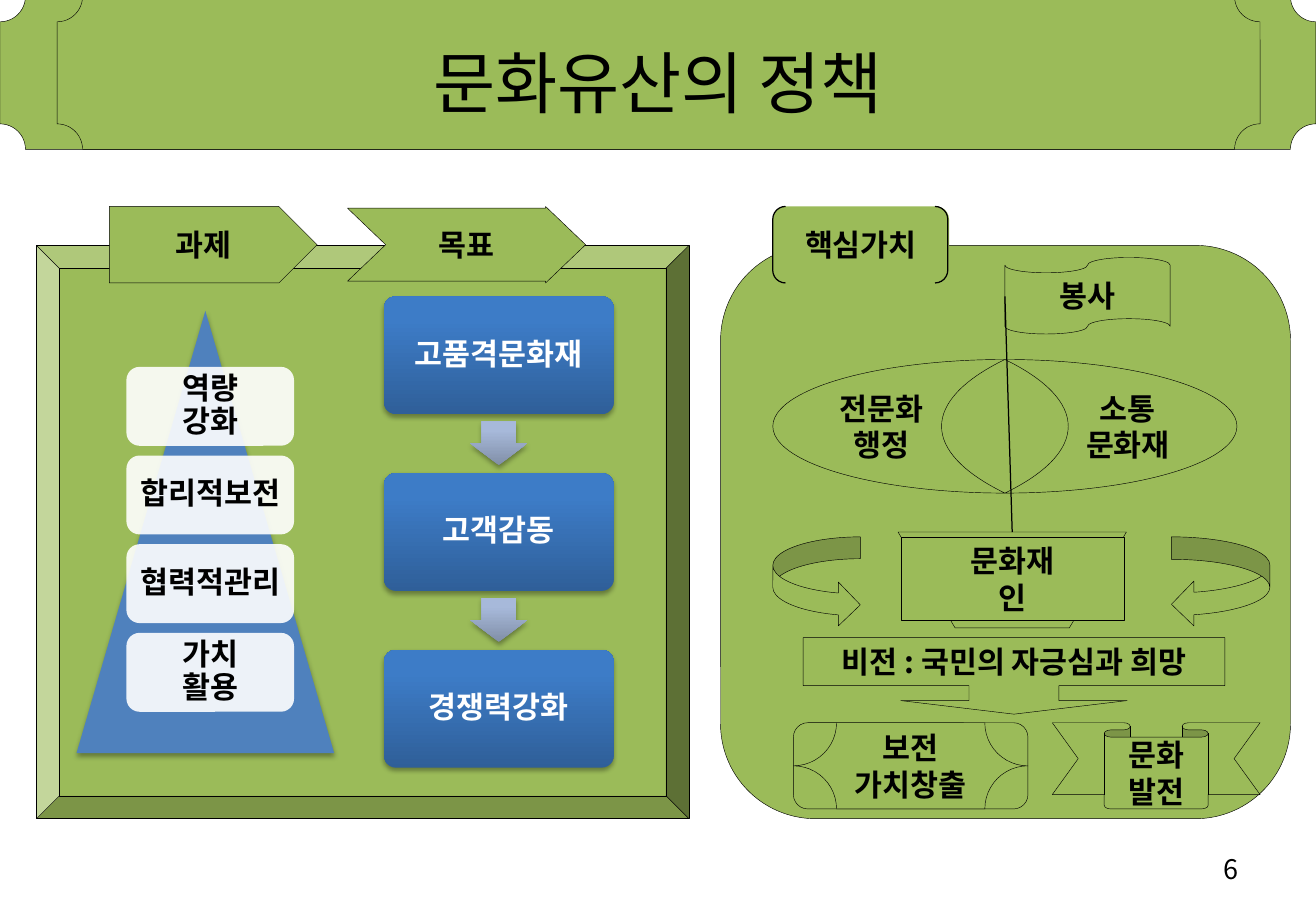
from dataclasses import dataclass
from typing import Optional

from lxml.etree import SubElement
from pptx import Presentation
from pptx.dml.color import RGBColor
from pptx.enum.shapes import MSO_CONNECTOR, MSO_SHAPE as Kind
from pptx.enum.text import MSO_ANCHOR, MSO_AUTO_SIZE, PP_ALIGN
from pptx.oxml.ns import qn
from pptx.util import Inches, Pt


@dataclass(frozen=True)
class Theme:
    font: str = "Noto Sans CJK KR"
    green: str = "9BBB59"
    blue: str = "4F81BD"
    white: str = "FFFFFF"
    black: str = "000000"
    goal: tuple[str, str] = ("2F5F99", "3D7CC7")
    arrow: tuple[str, str] = ("818FA8", "A7B9DA")
    title_size: float = 40
    label_size: float = 18
    number_size: float = 16
    hairline: float = 0.25
    thin_line: float = 0.75


THEME = Theme()


@dataclass(frozen=True)
class Figure:
    kind: Kind
    at: tuple[float, float, float, float]
    text: str = ""
    adjust: tuple[float, ...] = ()
    fill: Optional[str] = THEME.green
    gradient: Optional[tuple[str, str]] = None
    opacity: int = 100
    line: float = THEME.hairline
    ink: str = THEME.black
    flip: str = ""
    shadow: bool = False
    wrap: bool = False


BANNER = [
    Figure(Kind.PLAQUE, (0, -0.03, 10.83, 1.26)),
    Figure(Kind.PLAQUE, (0.47, -0.03, 9.9, 1.26)),
]

TASKS = ["역량\v강화", "합리적보전", "협력적관리", "가치\v활용"]
TASK_TOP, TASK_STEP = 3.02, 0.73
GOALS = ["고품격문화재", "고객감동", "경쟁력강화"]
GOAL_TOP, GOAL_STEP, GOAL_TO_ARROW = 2.44, 1.455, 1.03

TASKS_AND_GOALS = [
    Figure(Kind.BEVEL, (0.3, 2.02, 5.37, 4.72), adjust=(0.04,)),
    Figure(Kind.PENTAGON, (0.9, 1.7, 1.71, 0.63), "과제"),
    Figure(Kind.NOTCHED_RIGHT_ARROW, (2.86, 1.7, 1.96, 0.63), "목표",
           adjust=(0.954, 0.523)),
    Figure(Kind.ISOSCELES_TRIANGLE, (0.63, 2.56, 2.12, 3.64),
           fill=THEME.blue, line=0, shadow=True),
    *(Figure(Kind.ROUNDED_RECTANGLE,
             (1.04, TASK_TOP + TASK_STEP * row, 1.38, 0.65), task,
             fill=THEME.white, opacity=90, line=0, wrap=True)
      for row, task in enumerate(TASKS)),
    *(Figure(Kind.ROUNDED_RECTANGLE,
             (3.16, GOAL_TOP + GOAL_STEP * row, 1.89, 0.97), goal,
             adjust=(0.1,), gradient=THEME.goal, line=0,
             ink=THEME.white, shadow=True, wrap=True)
      for row, goal in enumerate(GOALS)),
    *(Figure(Kind.DOWN_ARROW,
             (3.87, GOAL_TOP + GOAL_TO_ARROW + GOAL_STEP * row, 0.47, 0.36),
             adjust=(0.6, 0.5), gradient=THEME.arrow, line=0, shadow=True)
      for row in range(len(GOALS) - 1)),
]

CORE_VALUES = [
    Figure(Kind.ROUNDED_RECTANGLE, (5.93, 2.02, 4.69, 4.72)),
    Figure(Kind.ROUNDED_RECTANGLE, (6.36, 1.7, 1.45, 0.63), "핵심가치", line=0),
    Figure(Kind.DOUBLE_BRACKET, (6.36, 1.7, 1.44, 0.63),
           fill=None, line=THEME.thin_line),
    Figure(Kind.MOON, (6.36, 2.96, 1.91, 1.1), "전문화\n행정", adjust=(0.727,)),
    Figure(Kind.MOON, (8.27, 2.96, 1.91, 1.1), "소통\n문화재",
           adjust=(0.727,), flip="flipH"),
    Figure(Kind.FLOWCHART_PUNCHED_TAPE, (8.27, 2.12, 1.36, 0.63), "봉사"),
    Figure(Kind.TRAPEZOID, (7.39, 4.38, 1.88, 0.79),
           adjust=(0.595,), flip="flipV"),
    Figure(Kind.RECTANGLE, (7.42, 4.42, 1.83, 0.69), "문화재\n인"),
    Figure(Kind.CURVED_RIGHT_ARROW, (6.36, 4.42, 0.72, 0.74)),
    Figure(Kind.CURVED_LEFT_ARROW, (9.64, 4.42, 0.81, 0.74)),
    Figure(Kind.DOWN_ARROW_CALLOUT, (6.61, 5.25, 3.47, 0.63),
           "비전 : 국민의 자긍심과 희망", adjust=(1.175, 1.479, 0.177, 0.627)),
    Figure(Kind.ROUNDED_RECTANGLE, (6.53, 5.95, 1.93, 0.71)),
    Figure(Kind.PLAQUE, (6.53, 5.95, 1.93, 0.71), "보전\n가치창출", adjust=(0.5,)),
    Figure(Kind.DOWN_RIBBON, (8.66, 5.95, 1.71, 0.71), "문화\n발전"),
]
FLAGPOLE = (8.27, 2.44, 8.33, 4.38)


def color(value: str) -> RGBColor:
    return RGBColor.from_string(value)


def write(shape, text: str, size: float, ink: str = THEME.black,
          bold: bool = False, align: PP_ALIGN = PP_ALIGN.CENTER) -> None:
    frame = shape.text_frame
    frame.text = text
    frame.auto_size = MSO_AUTO_SIZE.NONE
    frame.vertical_anchor = MSO_ANCHOR.MIDDLE
    for para in frame.paragraphs:
        para.alignment = align
        for span in para.runs:
            span.font.size = Pt(size)
            span.font.bold = bold
            span.font.color.rgb = color(ink)
            span.font.name = THEME.font
    for properties in shape.element.iter(qn("a:rPr")):
        SubElement(properties, qn("a:ea"), typeface=THEME.font)


def add_soft_shadow(shape) -> None:
    effects = shape.element.spPr.find(qn("a:effectLst"))
    shadow = SubElement(effects, qn("a:outerShdw"), blurRad=str(Pt(3.1)),
                        dist=str(Pt(1.8)), dir="5400000", rotWithShape="0")
    tone = SubElement(shadow, qn("a:srgbClr"), val=THEME.black)
    SubElement(tone, qn("a:alpha"), val="35000")


def paint(shape, figure: Figure) -> None:
    fill = shape.fill
    if figure.gradient:
        fill.gradient()
        fill.gradient_angle = 90
        for stop, tone, position in zip(fill.gradient_stops, figure.gradient, (0, 0.8)):
            stop.color.rgb = color(tone)
            stop.position = position
    elif figure.fill:
        fill.solid()
        fill.fore_color.rgb = color(figure.fill)
        if figure.opacity < 100:
            tone = shape.element.spPr.find(qn("a:solidFill"))[0]
            SubElement(tone, qn("a:alpha"), val=str(figure.opacity * 1000))
    else:
        fill.background()
    if figure.line:
        shape.line.color.rgb = color(THEME.black)
        shape.line.width = Pt(figure.line)
    else:
        shape.line.fill.background()


def draw(shapes, figure: Figure):
    shape = shapes.add_shape(figure.kind, *map(Inches, figure.at))
    for index, value in enumerate(figure.adjust):
        shape.adjustments[index] = value
    paint(shape, figure)
    shape.shadow.inherit = False
    if figure.shadow:
        add_soft_shadow(shape)
    if figure.flip:
        shape.element.spPr.find(qn("a:xfrm")).set(figure.flip, "1")
    if figure.text:
        write(shape, figure.text, THEME.label_size, figure.ink, bold=True)
        frame = shape.text_frame
        frame.word_wrap = figure.wrap
        if figure.wrap:
            frame.margin_left = frame.margin_right = Inches(0.07)
            frame.margin_top = frame.margin_bottom = Inches(0.07)
            for para in frame.paragraphs:
                para.line_spacing = 0.9
    return shape


def draw_flagpole(shapes) -> None:
    pole = shapes.add_connector(MSO_CONNECTOR.STRAIGHT, *map(Inches, FLAGPOLE))
    pole.line.color.rgb = color(THEME.black)
    pole.line.width = Pt(THEME.thin_line)
    SubElement(pole.element.spPr, qn("a:effectLst"))


def main() -> None:
    deck = Presentation()
    deck.slide_width, deck.slide_height = Inches(10.83), Inches(7.5)
    page = deck.slides.add_slide(deck.slide_layouts[5])

    title = page.shapes.title
    title.left, title.top = Inches(0.54), Inches(0.05)
    title.width, title.height = Inches(9.75), Inches(1.25)
    write(title, "문화유산의 정책", THEME.title_size)
    for figure in BANNER:
        title.element.addprevious(draw(page.shapes, figure).element)

    number = page.shapes.add_textbox(*map(Inches, (7.76, 6.95, 2.53, 0.4)))
    number.text_frame.word_wrap = True
    write(number, "6", THEME.number_size, align=PP_ALIGN.RIGHT)

    for figures in (TASKS_AND_GOALS, CORE_VALUES):
        panel = page.shapes.add_group_shape()
        for figure in figures:
            draw(panel.shapes, figure)
            if figure.kind == Kind.RECTANGLE:
                draw_flagpole(panel.shapes)

    deck.save("out.pptx")


if __name__ == "__main__":
    main()
